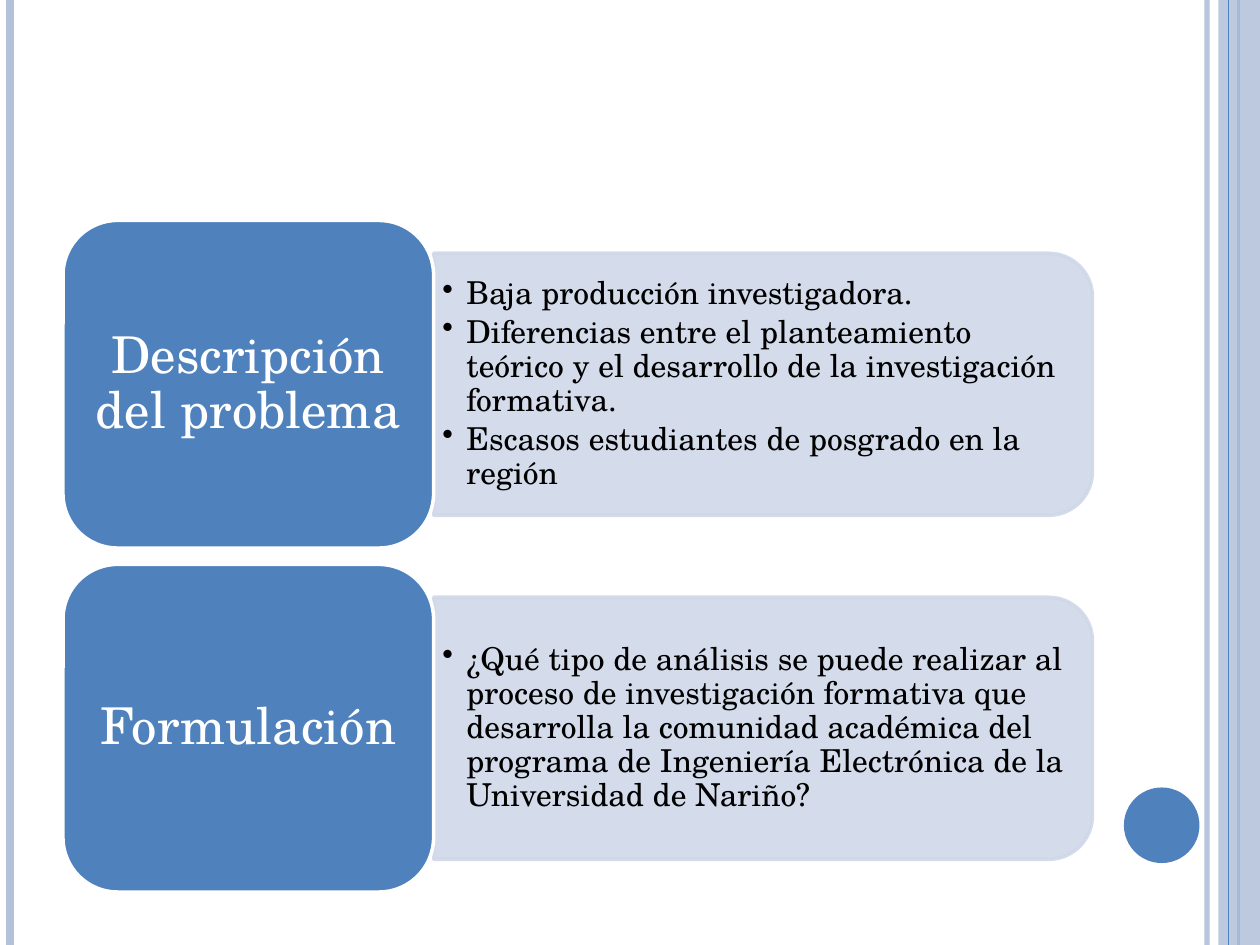
from pptx import Presentation
from pptx.dml.color import RGBColor
from pptx.enum.shapes import MSO_CONNECTOR, MSO_SHAPE
from pptx.enum.text import MSO_ANCHOR, PP_ALIGN
from pptx.oxml.ns import qn
from pptx.util import Inches, Pt
from lxml import etree

STRAIGHT = MSO_CONNECTOR.STRAIGHT
RECTANGLE, OVAL = MSO_SHAPE.RECTANGLE, MSO_SHAPE.OVAL
ROUNDED, ROUNDED_TOP = MSO_SHAPE.ROUNDED_RECTANGLE, MSO_SHAPE.ROUND_2_SAME_RECTANGLE
MIDDLE = MSO_ANCHOR.MIDDLE
CENTER, LEFT = PP_ALIGN.CENTER, PP_ALIGN.LEFT

FONT = "TeX Gyre Schola"
BLUE, PALE, PANEL, WHITE, BLACK = "4F81BD", "B3C1DB", "D0D8E8", "FFFFFF", "000000"
PAGE_WIDTH, PAGE_HEIGHT = 10, 7.5

ROWS = [
    ("Descripción del problema", [
        "Baja producción investigadora.",
        "Diferencias entre el planteamiento teórico y el desarrollo de la "
        "investigación formativa.",
        "Escasos estudiantes de posgrado en la región",
    ]),
    ("Formulación", [
        "¿Qué tipo de análisis se puede realizar al proceso de investigación "
        "formativa que desarrolla la comunidad académica del programa de "
        "Ingeniería Electrónica de la Universidad de Nariño?",
    ]),
]


def color(value):
    return RGBColor.from_string(value)


def set_opacity(shape, percent):
    """Apply one opacity to the fill and line colours of a shape."""
    for node in shape._element.spPr.iter(qn("a:srgbClr")):
        etree.SubElement(node, qn("a:alpha")).set("val", str(percent * 1000))


def add_box(page, kind, box, fill, line=None, opacity=100):
    shape = page.shapes.add_shape(kind, *map(Inches, box))
    shape.shadow.inherit = False
    shape.fill.solid()
    shape.fill.fore_color.rgb = color(fill)
    if line:
        shape.line.color.rgb = color(line)
        shape.line.width = Pt(2)
    else:
        shape.line.fill.background()
    if opacity < 100:
        set_opacity(shape, opacity)
    return shape


def add_rule(page, x, line, width, opacity=100):
    """Draw a vertical line over the full page height."""
    rule = page.shapes.add_connector(
        STRAIGHT, Inches(x), 0, Inches(x), Inches(PAGE_HEIGHT))
    rule.line.color.rgb = color(line)
    rule.line.width = Pt(width)
    if opacity < 100:
        set_opacity(rule, opacity)
    etree.SubElement(rule._element.spPr, qn("a:effectLst"))


def write_text(shape, lines, size, ink, align, margins, space_after):
    frame = shape.text_frame
    frame.word_wrap = True
    frame.vertical_anchor = MIDDLE
    frame.margin_left = frame.margin_right = Inches(margins[0])
    frame.margin_top = frame.margin_bottom = Inches(margins[1])
    frame.text = "\n".join(lines)
    for para in frame.paragraphs:
        para.alignment = align
        para.line_spacing = 0.9
        para.space_after = Pt(space_after)
        for span in para.runs:
            span.font.name = FONT
            span.font.size = Pt(size)
            span.font.color.rgb = color(ink)


def add_bullets(shape, indent):
    for para in shape.text_frame.paragraphs:
        properties = para._p.get_or_add_pPr()
        properties.set("marL", str(Inches(indent)))
        properties.set("indent", str(-Inches(indent)))
        etree.SubElement(properties, qn("a:buChar")).set("char", "•")


def add_page_frame(page):
    """Decorative rules, side band and dot around the page."""
    add_rule(page, 9.58, PALE, 3, 93)
    add_rule(page, 0.08, PALE, 4.5)
    add_rule(page, 9.83, BLUE, 1.5)
    add_box(page, RECTANGLE, (9.67, 0, PAGE_WIDTH - 9.67, PAGE_HEIGHT), PALE, opacity=87)
    add_rule(page, 9.75, BLUE, 0.75)
    add_box(page, OVAL, (8.92, 6.25, 0.6, 0.6), BLUE)


def add_row(page, box, heading, points):
    """A heading block with a panel of points on its right."""
    left, top, width, height = box
    label_width = width * 0.36
    panel_left, panel_width = left + label_width, width - label_width
    panel_height = height * 0.8
    middle = top + height / 2

    # Panel: a shape with two round corners, turned so they face right
    panel = add_box(
        page, ROUNDED_TOP,
        (panel_left + (panel_width - panel_height) / 2, middle - panel_width / 2,
         panel_height, panel_width),
        PANEL, PANEL, 90)
    panel.rotation = 90

    # Points, kept upright in their own text box
    text_box = page.shapes.add_textbox(*map(Inches, (
        panel_left, middle - 0.94, panel_width - 0.1, 1.88)))
    write_text(text_box, points, 18, BLACK, LEFT, (0.07, 0.04), 2.7)
    add_bullets(text_box, 0.19)

    # Heading block
    label = add_box(page, ROUNDED, (left, top, label_width, height), BLUE, WHITE)
    write_text(label, [heading], 29, WHITE, CENTER, (0.11, 0.06), 10)


def add_row_list(page, box, rows, gap):
    left, top, width, height = box
    row_height = (height - gap * (len(rows) - 1)) / len(rows)
    for index, (heading, points) in enumerate(rows):
        row_top = top + index * (row_height + gap)
        add_row(page, (left, row_top, width, row_height), heading, points)


def main():
    deck = Presentation()
    deck.slide_width, deck.slide_height = Inches(PAGE_WIDTH), Inches(PAGE_HEIGHT)
    page = deck.slides.add_slide(deck.slide_layouts[6])
    page.background.fill.solid()
    page.background.fill.fore_color.rgb = color(WHITE)
    add_page_frame(page)
    add_row_list(page, (0.5, 1.75, 8.17, 5.33), ROWS, 0.13)
    deck.save("out.pptx")


if __name__ == "__main__":
    main()
